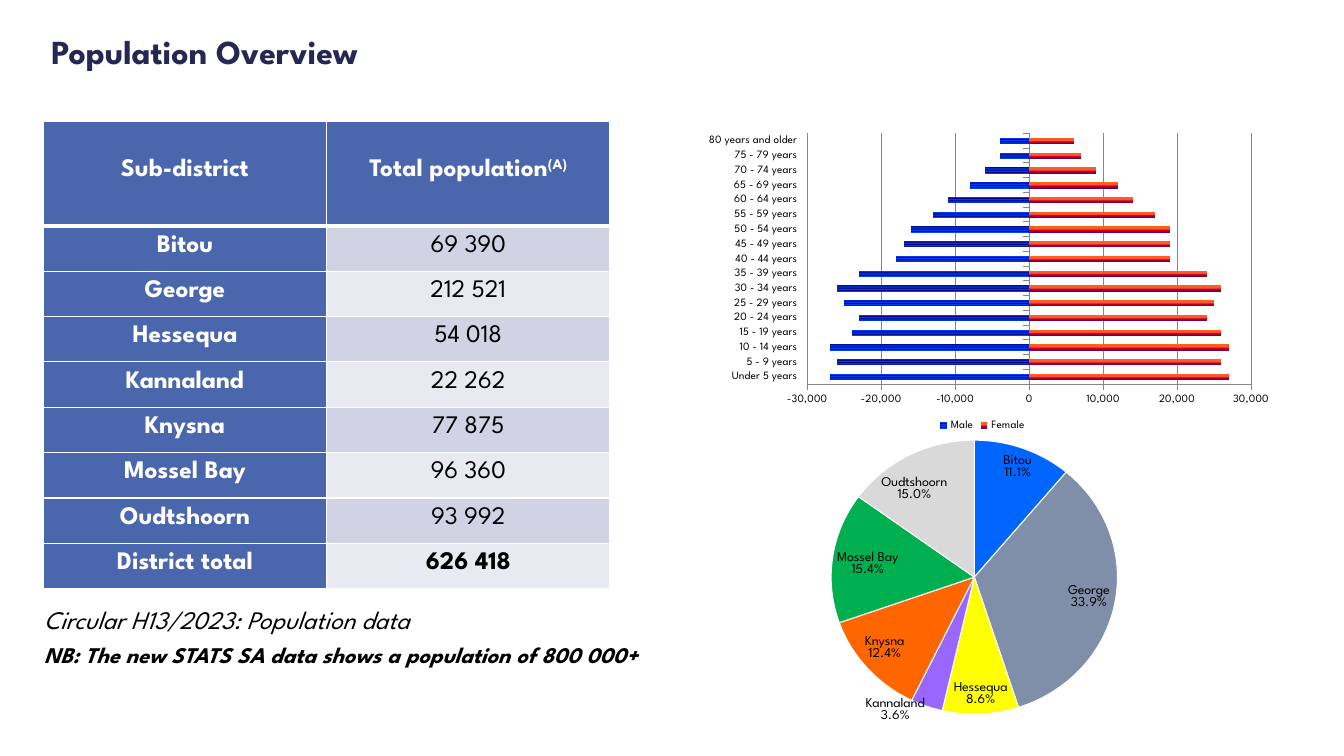
from dataclasses import dataclass

import pptx
import pptx.chart.data
import pptx.dml.color
import pptx.enum.chart
import pptx.enum.text
import pptx.oxml
import pptx.oxml.ns
import pptx.util
from lxml import etree
from pptx.util import Inches, Pt

FONT = "League Spartan"
COLORS = {
    "navy": "242852", "header": "4A66AC", "band_dark": "D0D3E3", "band_light": "E9EAF1",
    "white": "FFFFFF", "black": "000000", "axis": "868686",
}
qn = pptx.oxml.ns.qn


@dataclass
class SubDistrict:
    name: str
    population: str
    share: float
    color: str


@dataclass
class Gender:
    name: str
    thousands: list[int]
    sign: int
    gradient: list[tuple[int, str]]


SUB_DISTRICTS = [
    SubDistrict("Bitou", "69 390", 11.1, "0066FF"),
    SubDistrict("George", "212 521", 33.9, "7F8FA9"),
    SubDistrict("Hessequa", "54 018", 8.6, "FFFF00"),
    SubDistrict("Kannaland", "22 262", 3.6, "9966FF"),
    SubDistrict("Knysna", "77 875", 12.4, "FF6600"),
    SubDistrict("Mossel Bay", "96 360", 15.4, "00B050"),
    SubDistrict("Oudtshoorn", "93 992", 15.0, "D9D9D9"),
]
AGE_GROUPS = (["Under 5 years"] + [f"{age} - {age + 4} years" for age in range(5, 80, 5)]
              + ["80 years and older"])
GENDERS = [
    Gender("Male", [27, 26, 27, 24, 23, 25, 26, 23, 18, 17, 16, 13, 11, 8, 6, 4, 4], -1,
           [(stop, "0047FF" if i % 2 else "000082")
            for i, stop in enumerate((0, 13, 28, 43, 58, 72, 87, 100))]),
    Gender("Female", [27, 26, 27, 26, 24, 25, 26, 24, 19, 19, 19, 17, 14, 12, 9, 7, 6], 1,
           [(0, "FF6600"), (45, "FF5050"), (70, "CC0000"), (100, "660066")]),
]


def rgb(name: str) -> pptx.dml.color.RGBColor:
    return pptx.dml.color.RGBColor.from_string(COLORS.get(name, name))


def style_font(font, size: float, color: str = "black", bold: bool = False,
               italic: bool = False) -> None:
    font.name, font.size, font.bold, font.italic = FONT, Pt(size), bold, italic
    font.color.rgb = rgb(color)


def fill_cell(cell, text: str, fill: str, color: str, bold: bool, header: bool) -> None:
    cell.fill.solid()
    cell.fill.fore_color.rgb = rgb(fill)
    cell.vertical_anchor = pptx.enum.text.MSO_ANCHOR.MIDDLE
    cell.margin_left = cell.margin_right = Inches(0.07 if header else 0.04)
    cell.margin_top = cell.margin_bottom = 0
    paragraph = cell.text_frame.paragraphs[0]
    paragraph.text = text
    paragraph.alignment = pptx.enum.text.PP_ALIGN.CENTER
    paragraph.line_spacing, paragraph.space_after = Pt(13), Pt(8)
    for run in paragraph.runs:
        style_font(run.font, 18, color, bold)
    # Cell borders precede the fill
    for index, side in enumerate(("lnL", "lnR", "lnT", "lnB")):
        thick = (header and side == "lnB") or (fill_cell_below_header(cell) and side == "lnT")
        border = pptx.oxml.parse_xml(
            f'<a:{side} {pptx.oxml.ns.nsdecls("a")} w="{Pt(3 if thick else 1)}"><a:solidFill>'
            f'<a:srgbClr val="{COLORS["white"]}"/></a:solidFill></a:{side}>')
        cell._tc.get_or_add_tcPr().insert(index, border)


def fill_cell_below_header(cell) -> bool:
    return cell._tc.row_idx == 1


def add_population_table(slide) -> None:
    rows = [("Sub-district", "Total population")]
    rows += [(area.name, area.population) for area in SUB_DISTRICTS]
    rows.append(("District total", "626 418"))
    table = slide.shapes.add_table(len(rows), 2, Inches(0.43), Inches(1.2),
                                   Inches(5.62), Inches(4.65)).table
    for column in table.columns:
        column.width = Inches(2.81)
    for r, values in enumerate(rows):
        table.rows[r].height = Inches(0.45 if r else 1.04)
        for c, value in enumerate(values):
            heading = r == 0 or c == 0
            band = "band_dark" if r % 2 else "band_light"
            fill_cell(table.cell(r, c), value, "header" if heading else band,
                      "white" if heading else "black", heading or r == len(rows) - 1, r == 0)
    # Superscript footnote mark
    mark = table.cell(0, 1).text_frame.paragraphs[0].add_run()
    mark.text = "(A)"
    style_font(mark.font, 18, "white", True)
    mark.font._element.set("baseline", "30000")


def add_text(slide, box: tuple[float, float, float, float], lines: list[str]):
    frame = slide.shapes.add_textbox(*map(Inches, box)).text_frame
    frame.text = "\n".join(lines)
    return frame


def add_chart(slide, kind, box: tuple[float, float, float, float], data,
              plot: tuple[float, float, float, float]):
    chart = slide.shapes.add_chart(kind, *map(Inches, box), data).chart
    chart.has_title = False
    style_font(chart.font, 8)
    # Fixed inner plot area
    area = chart._chartSpace.chart.plotArea
    for layout in area.findall(qn("c:layout")):
        area.remove(layout)
    modes = '<c:layoutTarget val="inner"/><c:xMode val="edge"/><c:yMode val="edge"/>'
    sizes = "".join(f'<c:{key} val="{value}"/>' for key, value in zip("xywh", plot))
    area.insert(0, pptx.oxml.parse_xml(
        f'<c:layout {pptx.oxml.ns.nsdecls("c")}><c:manualLayout>{modes}{sizes}'
        '</c:manualLayout></c:layout>'))
    return chart


def add_share_pie(slide) -> None:
    data = pptx.chart.data.CategoryChartData()
    data.categories = [area.name for area in SUB_DISTRICTS]
    data.add_series("Series 1", [area.share for area in SUB_DISTRICTS])
    chart = add_chart(slide, pptx.enum.chart.XL_CHART_TYPE.PIE, (7.2, 4.31, 5.08, 2.99),
                      data, (0.2, 0.02, 0.57, 0.95))
    chart.has_legend = False
    pie = chart.plots[0]
    pie.vary_by_categories = True
    for index, area in enumerate(SUB_DISTRICTS):
        slice_format = pie.series[0].points[index].format
        slice_format.fill.solid()
        slice_format.fill.fore_color.rgb = rgb(area.color)
        slice_format.line.color.rgb = rgb("white")
        slice_format.line.width = Pt(0.75)
    labels = pie.series[0].data_labels
    labels.show_value = False
    labels.show_category_name = labels.show_percentage = True
    labels.number_format, labels.number_format_is_linked = "0.0%", False
    labels.position = pptx.enum.chart.XL_LABEL_POSITION.BEST_FIT
    style_font(labels.font, 10)
    # Name and share on separate lines
    separator = etree.Element(qn("c:separator"))
    separator.text = "\n"
    anchor = labels._element.find(qn("c:showBubbleSize"))
    if anchor is None:
        anchor = labels._element.find(qn("c:showPercent"))
    anchor.addnext(separator)


def add_age_pyramid(slide) -> None:
    data = pptx.chart.data.CategoryChartData(number_format="#,##0")
    data.categories = AGE_GROUPS
    for gender in GENDERS:
        data.add_series(gender.name, [gender.sign * 1000 * n for n in gender.thousands])
    chart = add_chart(slide, pptx.enum.chart.XL_CHART_TYPE.BAR_STACKED,
                      (6.85, 1.2, 5.79, 3.11), data, (0.2, 0.04, 0.76, 0.8))
    bars = chart.plots[0]
    bars.gap_width, bars.overlap, bars.vary_by_categories = 150, 100, False
    for gender, series in zip(GENDERS, bars.series):
        stops = "".join(f'<a:gs pos="{stop * 1000}"><a:srgbClr val="{color}"/></a:gs>'
                        for stop, color in gender.gradient)
        series._element.get_or_add_spPr().insert(0, pptx.oxml.parse_xml(
            f'<a:gradFill {pptx.oxml.ns.nsdecls("a")}><a:gsLst>{stops}</a:gsLst>'
            '<a:lin ang="5400000" scaled="0"/></a:gradFill>'))
        series.invert_if_negative = False
    # Axes and legend
    ages, people = chart.category_axis, chart.value_axis
    ages.tick_label_position = pptx.enum.chart.XL_TICK_LABEL_POSITION.LOW
    people.minimum_scale, people.maximum_scale, people.major_unit = -30000, 30000, 10000
    people.tick_labels.number_format = "#,##0"
    people.tick_labels.number_format_is_linked = False
    people.has_major_gridlines = True
    for line in (ages.format.line, people.format.line, people.major_gridlines.format.line):
        line.color.rgb = rgb("axis")
        line.width = Pt(0.75)
    for axis in (ages, people):
        axis.major_tick_mark = pptx.enum.chart.XL_TICK_MARK.OUTSIDE
    chart.has_legend = True
    chart.legend.position = pptx.enum.chart.XL_LEGEND_POSITION.BOTTOM
    chart.legend.include_in_layout = False


def main() -> None:
    deck = pptx.Presentation()
    deck.slide_width, deck.slide_height = Inches(13.33), Inches(7.5)
    slide = deck.slides.add_slide(deck.slide_layouts[6])

    # Title
    title = add_text(slide, (0.43, 0.2, 12.54, 0.61), ["Population Overview"])
    title.word_wrap = True
    title.vertical_anchor = pptx.enum.text.MSO_ANCHOR.MIDDLE
    title.margin_left = title.margin_right = title.margin_top = title.margin_bottom = Inches(0.08)
    style_font(title.paragraphs[0].runs[0].font, 24, "navy", True)

    add_population_table(slide)

    # Source notes under the table
    notes = add_text(slide, (-0.13, 5.93, 7.33, 0.73), [
        "Circular H13/2023: Population data",
        "NB: The new STATS SA data shows a population of 800 000+"])
    notes.word_wrap = True
    for index, paragraph in enumerate(notes.paragraphs):
        paragraph.alignment = pptx.enum.text.PP_ALIGN.JUSTIFY
        paragraph.line_spacing = 1.07
        paragraph.space_before = Pt(3 * index)
        paragraph._p.get_or_add_pPr().set("marL", str(Inches(0.47)))
        style_font(paragraph.runs[0].font, 16 if index else 18, bold=index == 1, italic=True)

    add_share_pie(slide)
    add_age_pyramid(slide)
    deck.save("out.pptx")


if __name__ == "__main__":
    main()
